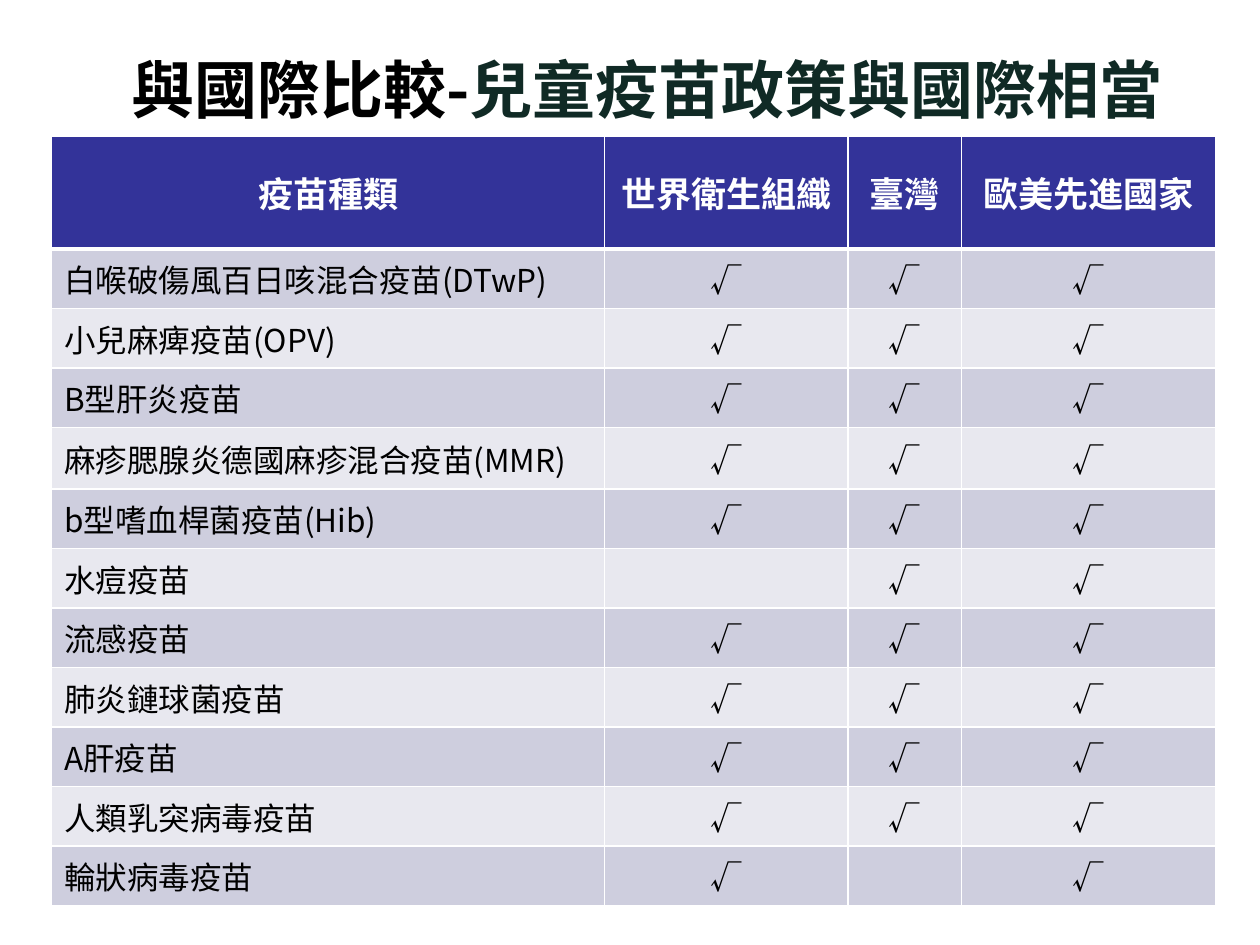
import dataclasses

import lxml.etree
import pptx
import pptx.dml.color
import pptx.enum.text
import pptx.oxml.ns
import pptx.util

Cm = pptx.util.Cm
Pt = pptx.util.Pt
Align = pptx.enum.text.PP_ALIGN
Anchor = pptx.enum.text.MSO_ANCHOR
qn = pptx.oxml.ns.qn


@dataclasses.dataclass(frozen=True)
class Theme:
    """Fonts, sizes, colours and line widths of the slide."""
    font: str = "Noto Sans CJK SC"
    title: int = 36
    head: int = 20
    body: int = 18
    ink: str = "000000"
    accent: str = "102A25"
    white: str = "FFFFFF"
    navy: str = "333399"
    bands: tuple = ("CECEDE", "E8E8EF")
    thin: int = 1
    thick: int = 3


class Deck:
    """Draws styled elements on the current slide."""

    def __init__(self, theme, wide, high):
        """Open a deck with one blank slide."""
        self.theme = theme
        self.show = pptx.Presentation()
        self.show.slide_width, self.show.slide_height = Cm(wide), Cm(high)
        self.slide = self.show.slides.add_slide(self.show.slide_layouts[6])

    def tint(self, code):
        """Turn a hex code into a colour."""
        return pptx.dml.color.RGBColor.from_string(code)

    def style(self, para, size, bold, align):
        """Set the font and alignment of a paragraph."""
        para.alignment = align
        para.font.size, para.font.bold = Pt(size), bold
        para.font.name = self.theme.font
        base = para._p.pPr.find(qn("a:defRPr"))
        lxml.etree.SubElement(base, qn("a:ea"), typeface=self.theme.font)

    def title(self, parts, left, top, wide, high):
        """Add a centred title made of coloured parts."""
        frame = self.slide.shapes.add_textbox(Cm(left), Cm(top), Cm(wide), Cm(high)).text_frame
        frame.word_wrap = True
        frame.vertical_anchor = Anchor.MIDDLE
        para = frame.paragraphs[0]
        self.style(para, self.theme.title, True, Align.CENTER)
        for text, code in parts:
            run = para.add_run()
            run.text = text
            run.font.color.rgb = self.tint(code)

    def edge(self, cell, side, width):
        """Draw one white border of a cell."""
        line = lxml.etree.SubElement(cell._tc.get_or_add_tcPr(), qn(f"a:ln{side}"), w=str(Pt(width)))
        fill = lxml.etree.SubElement(line, qn("a:solidFill"))
        lxml.etree.SubElement(fill, qn("a:srgbClr"), val=self.theme.white)

    def cell(self, cell, text, row, col):
        """Fill a cell in header or banded style."""
        look, head = self.theme, row == 0
        for side in "LRTB":
            heavy = (side, row) in (("B", 0), ("T", 1))
            self.edge(cell, side, look.thick if heavy else look.thin)
        cell.fill.solid()
        cell.fill.fore_color.rgb = self.tint(look.navy if head else look.bands[(row - 1) % 2])
        cell.vertical_anchor = Anchor.MIDDLE
        cell.text = text
        para = cell.text_frame.paragraphs[0]
        align = Align.CENTER if head or col else Align.LEFT
        self.style(para, look.head if head else look.body, head, align)
        para.font.color.rgb = self.tint(look.white if head else look.ink)

    def table(self, data, left, top, cols, rows):
        """Add a table with the given column widths and row heights."""
        grid = self.slide.shapes.add_table(
            len(rows), len(cols), Cm(left), Cm(top), Cm(sum(cols)), Cm(sum(rows))).table
        for col, wide in zip(grid.columns, cols):
            col.width = Cm(wide)
        for row, high in zip(grid.rows, rows):
            row.height = Cm(high)
        for r, line in enumerate(data):
            for c, text in enumerate(line):
                self.cell(grid.cell(r, c), text, r, c)


HEAD = ("疫苗種類", "世界衛生組織", "臺灣", "歐美先進國家")
NAMES = (
    "白喉破傷風百日咳混合疫苗(DTwP)",
    "小兒麻痺疫苗(OPV)",
    "B型肝炎疫苗",
    "麻疹腮腺炎德國麻疹混合疫苗(MMR)",
    "b型嗜血桿菌疫苗(Hib)",
    "水痘疫苗",
    "流感疫苗",
    "肺炎鏈球菌疫苗",
    "A肝疫苗",
    "人類乳突病毒疫苗",
    "輪狀病毒疫苗",
)
GAPS = {("水痘疫苗", "世界衛生組織"), ("輪狀病毒疫苗", "臺灣")}


def main():
    """Build and save the vaccine comparison slide."""
    theme = Theme()
    deck = Deck(theme, 25.4, 19.05)
    marks = [[name] + ["" if (name, place) in GAPS else "√" for place in HEAD[1:]]
             for name in NAMES]
    rows = [2.28] + [1.24 if "MMR" in name else 1.2 for name in NAMES]
    deck.table([HEAD] + marks, 1.04, 2.74, (11.15, 4.9, 2.29, 5.13), rows)
    deck.title((("與國際比較-", theme.ink), ("兒童疫苗政策與國際相當", theme.accent)),
               0.69, 0.86, 24.71, 1.83)
    deck.show.save("out.pptx")


if __name__ == "__main__":
    main()
